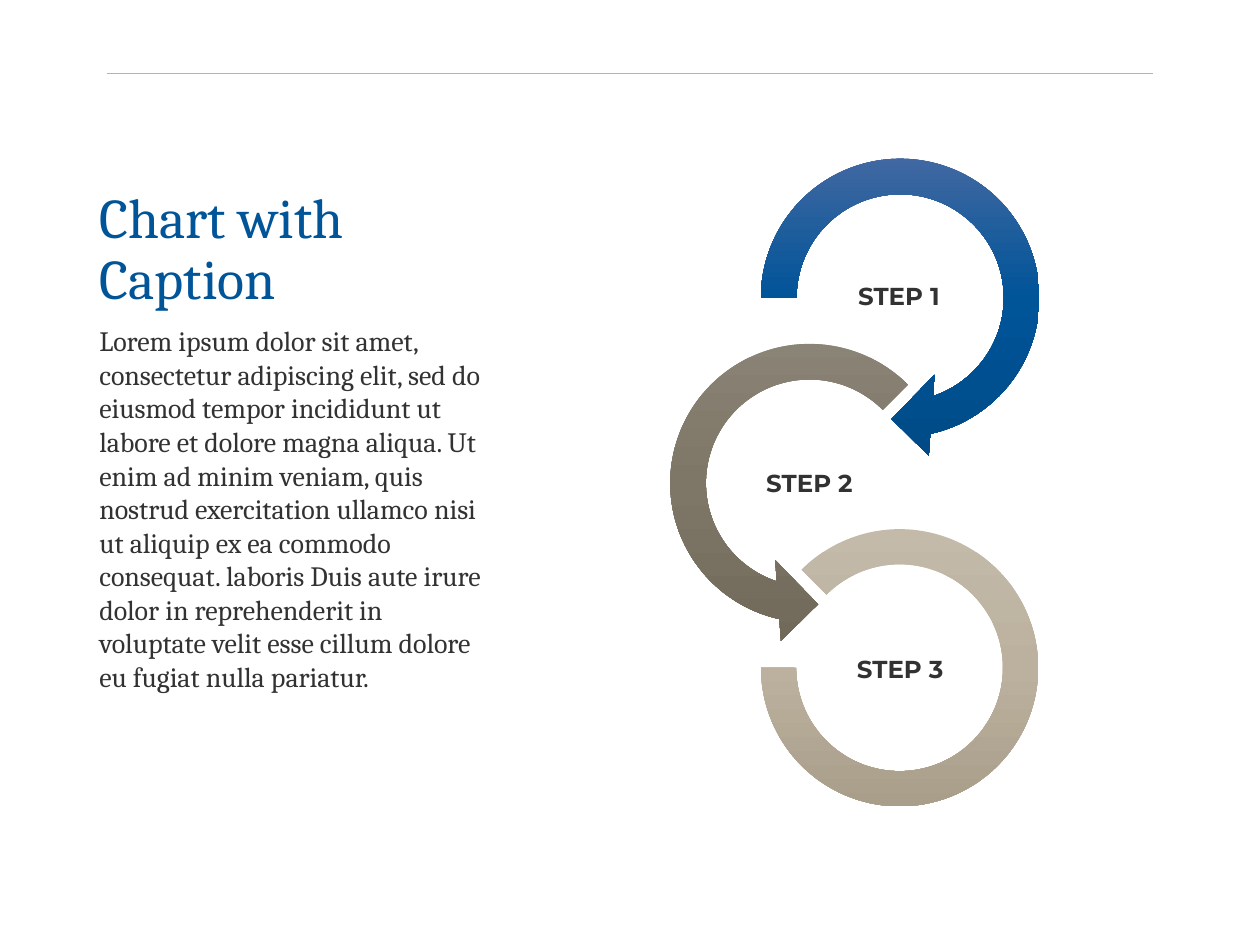
from copy import deepcopy

from lxml.etree import SubElement
from pptx import Presentation
from pptx.dml.color import RGBColor
from pptx.enum.shapes import MSO_CONNECTOR, MSO_SHAPE
from pptx.enum.text import MSO_ANCHOR, PP_ALIGN
from pptx.oxml.ns import qn
from pptx.util import Inches, Pt


def rgb(value):
    return RGBColor.from_string(value)


def add_text(text, left, top, width, height, size, font="Cambria", color="323232",
             bold=False, align=PP_ALIGN.LEFT, anchor=MSO_ANCHOR.TOP,
             spacing=1.0, after=0, inset=None):
    box = slide.shapes.add_textbox(Inches(left), Inches(top), Inches(width), Inches(height))
    tf = box.text_frame
    tf.word_wrap = True
    tf.vertical_anchor = anchor
    if inset is not None:
        tf.margin_left = tf.margin_right = Inches(inset)
        tf.margin_top = tf.margin_bottom = Inches(inset)
    p = tf.paragraphs[0]
    p.alignment = align
    p.line_spacing = spacing
    p.space_after = Pt(after)
    r = p.add_run()
    r.text = text
    r.font.name = font
    r.font.size = Pt(size)
    r.font.bold = bold
    r.font.color.rgb = rgb(color)


prs = Presentation()
prs.slide_width = Inches(10)
prs.slide_height = Inches(7.5)
slide = prs.slides.add_slide(prs.slide_layouts[6])

# Rule across the top
rule = slide.shapes.add_connector(MSO_CONNECTOR.STRAIGHT, Inches(0.85), Inches(0.58),
                                  Inches(9.15), Inches(0.58))
rule.line.color.rgb = rgb("BCB29F")
rule.line.width = Pt(0.5)
SubElement(rule._element.spPr, qn("a:effectLst"))

# Steps: preset, left, top, size, adjustments, gradient, label left, label top
steps = [
    (MSO_SHAPE.CIRCULAR_ARROW, 5.86, 1.08, 2.57, (0.11, 11.423, 45, 108, 0.125),
     ("4B6BA3", "005498", "004B87"), 6.42, 2.01),
    (MSO_SHAPE.LEFT_CIRCULAR_ARROW, 5.14, 2.55, 2.57, (0.11, 11.423, 63, 189, 0.125),
     ("8C8679", "7E7666", "716A5A"), 5.71, 3.49),
    (MSO_SHAPE.BLOCK_ARC, 6.04, 4.2, 2.2, (135, 108, 0.127),
     ("C3BAAA", "BCB19E", "A99E8A"), 6.43, 4.97),
]
for number, (preset, left, top, size, adjustments, colors, text_left, text_top) in enumerate(steps, 1):
    sp = slide.shapes.add_shape(preset, Inches(left), Inches(top), Inches(size), Inches(size))
    sp.shadow.inherit = False
    sp.line.fill.background()
    for i, value in enumerate(adjustments):
        sp.adjustments[i] = value

    sp.fill.gradient()
    sp.fill.gradient_angle = 270
    stop_list = sp._element.spPr.find(".//" + qn("a:gsLst"))
    stop_list.append(deepcopy(stop_list[-1]))
    for stop, position, color in zip(sp.fill.gradient_stops, (0, 0.5, 1), colors):
        stop.position = position
        stop.color.rgb = rgb(color)

    add_text(f"STEP {number}", text_left, text_top, 1.43, 0.71, 14, font="Montserrat",
             bold=True, align=PP_ALIGN.CENTER, anchor=MSO_ANCHOR.MIDDLE,
             spacing=0.9, after=5, inset=0.01)

# Caption and title
add_text("Lorem ipsum dolor sit amet, consectetur adipiscing elit, sed do eiusmod tempor "
         "incididunt ut labore et dolore magna aliqua. Ut enim ad minim veniam, quis nostrud "
         "exercitation ullamco nisi ut aliquip ex ea commodo consequat. laboris Duis aute "
         "irure dolor in reprehenderit in voluptate velit esse cillum dolore eu fugiat nulla "
         "pariatur.", 0.69, 2.52, 3.23, 3.89, 16, after=3)
add_text("Chart with Caption", 0.69, 0.77, 3.23, 1.75, 32, color="005498",
         anchor=MSO_ANCHOR.BOTTOM, spacing=0.9)

prs.save("out.pptx")
